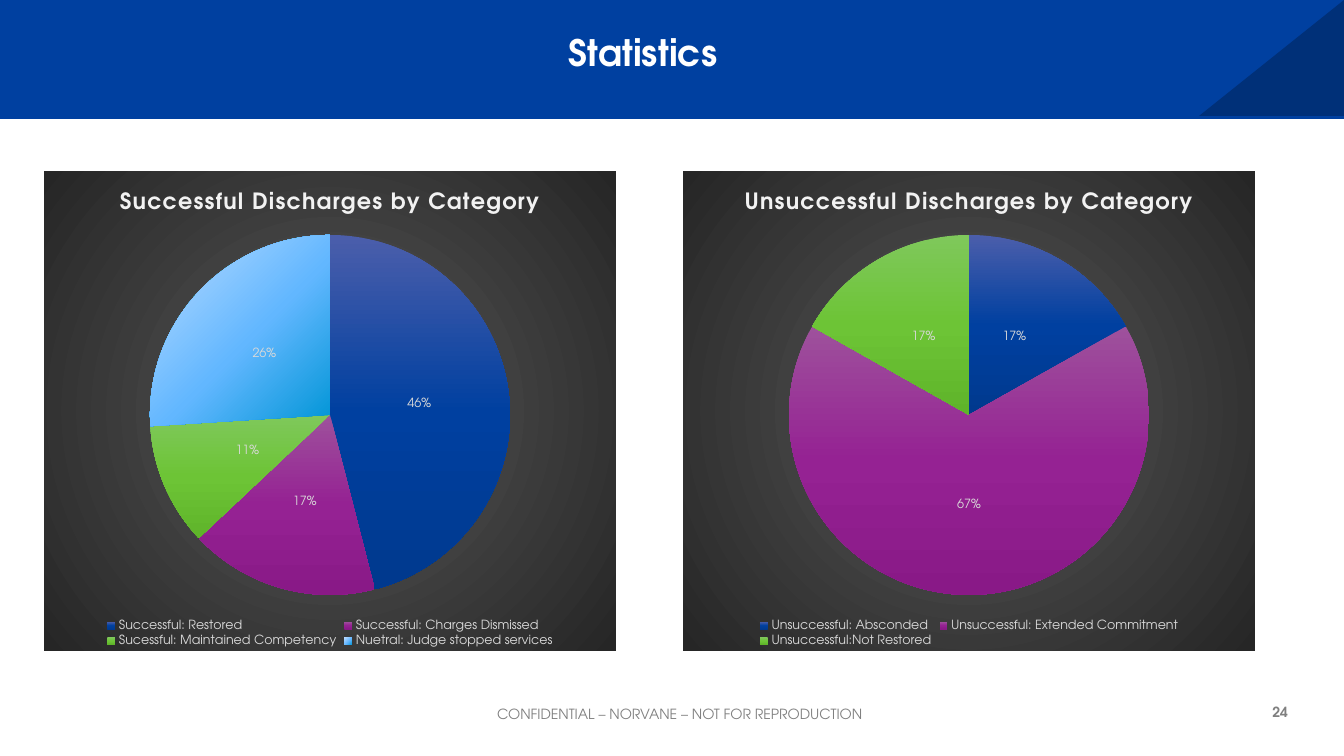
"""Build the Statistics slide: a banner, two discharge pie charts and a footer."""
from pptx import Presentation
from pptx.chart.data import CategoryChartData
from pptx.dml.color import RGBColor
from pptx.enum.chart import XL_CHART_TYPE as CT, XL_LABEL_POSITION as LP, XL_LEGEND_POSITION as LG
from pptx.enum.shapes import MSO_SHAPE as SHAPE
from pptx.enum.text import MSO_ANCHOR as ANCHOR, PP_ALIGN as ALIGN
from pptx.oxml import parse_xml
from pptx.oxml.ns import nsdecls
from pptx.util import Pt

FONT = "TeX Gyre Adventor"
COLORS = {"banner": "0040A0", "corner": "003078", "white": "FFFFFF", "footer": "808080",
          "chart_title": "F2F2F2", "chart_text": "D9D9D9"}

BANNER = [
    (SHAPE.RECTANGLE, (0, 0, 1344, 119), "banner"),
    (SHAPE.ISOSCELES_TRIANGLE, (1199, 0, 145, 116), "corner"),
]
TEXTS = [
    ("Statistics", (38, 25, 1210, 68), ALIGN.CENTER, ANCHOR.TOP,
     {"size": 26, "bold": True, "color": "white"}),
    ("CONFIDENTIAL – NORVANE – NOT FOR REPRODUCTION", (465, 697, 397, 34), ALIGN.RIGHT, ANCHOR.MIDDLE,
     {"size": 10, "bold": False, "color": "footer"}),
    ("24", (1243, 695, 45, 34), ALIGN.RIGHT, ANCHOR.MIDDLE,
     {"size": 10, "bold": True, "color": "footer"}),
]
CHARTS = [
    ("Successful Discharges by Category",
     {"Successful: Restored": 46, "Successful: Charges Dismissed": 17,
      "Sucessful: Maintained Competency": 11, "Nuetral: Judge stopped services": 26}),
    ("Unsuccessful Discharges by Category",
     {"Unsuccessful: Absconded": 17, "Unsuccessful: Extended Commitment": 67,
      "Unsuccessful:Not Restored": 17}),
]
CHART_LEFT, CHART_TOP, CHART_W, CHART_H, CHART_STEP = 44, 171, 572, 480, 639
PIE = {"x": 106, "y": 64, "w": 360, "h": 360}

DOWN = '<a:lin ang="5400000" scaled="0"/>'
CIRCLE = '<a:path path="circle"><a:fillToRect l="{}" t="{}" r="{}" b="{}"/></a:path>'
BACKDROP = ([(0, "595959"), (100, "262626")], CIRCLE.format(50000, 50000, 50000, 50000))
SLICES = [
    ([(0, "4B5EAB"), (50, "0040A0"), (100, "00398E")], DOWN),
    ([(0, "9E519C"), (50, "952293"), (100, "891987")], DOWN),
    ([(0, "7FC85B"), (50, "6DC436"), (100, "5FB42A")], DOWN),
    ([(0, "BDDCFF"), (55, "62B7FF"), (100, "0095D6")], CIRCLE.format(-40000, -90000, 140000, 190000)),
]


def px(n):
    return round(n * 914400 / 100.8)


def rgb(name):
    return RGBColor.from_string(COLORS[name])


def set_font(font, fmt):
    font.color.rgb = rgb(fmt["color"])
    for key, value in {**fmt, "name": FONT, "size": Pt(fmt["size"])}.items():
        if key != "color":
            setattr(font, key, value)


def gradient(stops, direction):
    gs = "".join(f'<a:gs pos="{pos * 1000}"><a:srgbClr val="{c}"/></a:gs>' for pos, c in stops)
    return parse_xml(f'<a:gradFill {nsdecls("a")} rotWithShape="1"><a:gsLst>{gs}</a:gsLst>{direction}</a:gradFill>')


def add_banner(s):
    for kind, box, color in BANNER:
        sp = s.shapes.add_shape(kind, *map(px, box))
        sp.shadow.inherit = False
        sp.fill.solid()
        sp.fill.fore_color.rgb = rgb(color)
        sp.line.fill.background()
        if kind == SHAPE.ISOSCELES_TRIANGLE:
            sp.adjustments[0] = 1


def add_text(s, text, box, align, anchor, fmt):
    tf = s.shapes.add_textbox(*map(px, box)).text_frame
    tf.word_wrap = True
    tf.vertical_anchor = anchor
    tf.margin_left = tf.margin_right = 0
    p = tf.paragraphs[0]
    p.alignment = align
    r = p.add_run()
    r.text = text
    set_font(r.font, fmt)


def add_pie(s, left, title, values):
    data = CategoryChartData()
    data.categories = list(values)
    data.add_series("Series 1", list(values.values()))
    box = (left, CHART_TOP, CHART_W, CHART_H)
    chart = s.shapes.add_chart(CT.PIE, *map(px, box), data).chart
    small = {"size": 9, "color": "chart_text"}
    set_font(chart.font, {"size": 10, "color": "chart_text"})

    p = chart.chart_title.text_frame.paragraphs[0]
    r = p.add_run()
    r.text = title
    set_font(r.font, {"size": 16, "bold": True, "color": "chart_title"})
    r.font._element.set("spc", "100")
    chart.chart_title.include_in_layout = False

    chart.has_legend = True
    chart.legend.position = LG.BOTTOM
    chart.legend.include_in_layout = False
    set_font(chart.legend.font, small)

    plot = chart.plots[0]
    plot.vary_by_categories = True
    plot.has_data_labels = True
    labels = plot.data_labels
    for key, value in {"show_value": True, "show_percentage": False, "number_format": '0"%"',
                       "number_format_is_linked": False, "position": LP.CENTER}.items():
        setattr(labels, key, value)
    set_font(labels.font, small)

    root = chart.element
    for i, style in zip(range(len(values)), SLICES):
        fmt = plot.series[0].points[i].format
        fmt.line.fill.background()
        fmt.fill.background()
        blank = root.xpath(f'.//c:dPt[c:idx/@val="{i}"]/c:spPr/a:noFill')[0]
        blank.getparent().replace(blank, gradient(*style))

    area = parse_xml(f'<c:spPr {nsdecls("c", "a")}><a:ln><a:noFill/></a:ln></c:spPr>')
    area.insert(0, gradient(*BACKDROP))
    root.xpath("./c:txPr")[0].addprevious(area)

    sizes = {"x": CHART_W, "y": CHART_H, "w": CHART_W, "h": CHART_H}
    places = "".join(f'<c:{k} val="{PIE[k] / sizes[k]:.4f}"/>' for k in PIE)
    layout = parse_xml(f'<c:layout {nsdecls("c")}><c:manualLayout><c:layoutTarget val="inner"/>'
                       f'<c:xMode val="edge"/><c:yMode val="edge"/>{places}</c:manualLayout></c:layout>')
    plot_area = root.xpath(".//c:plotArea")[0]
    for old in plot_area.xpath("./c:layout"):
        plot_area.remove(old)
    plot_area.insert(0, layout)


def main():
    prs = Presentation()
    prs.slide_width, prs.slide_height = px(1344), px(756)
    s = prs.slides.add_slide(prs.slide_layouts[6])
    add_banner(s)
    for text in TEXTS:
        add_text(s, *text)
    for i, (title, values) in enumerate(CHARTS):
        add_pie(s, CHART_LEFT + i * CHART_STEP, title, values)
    prs.save("out.pptx")


if __name__ == "__main__":
    main()
